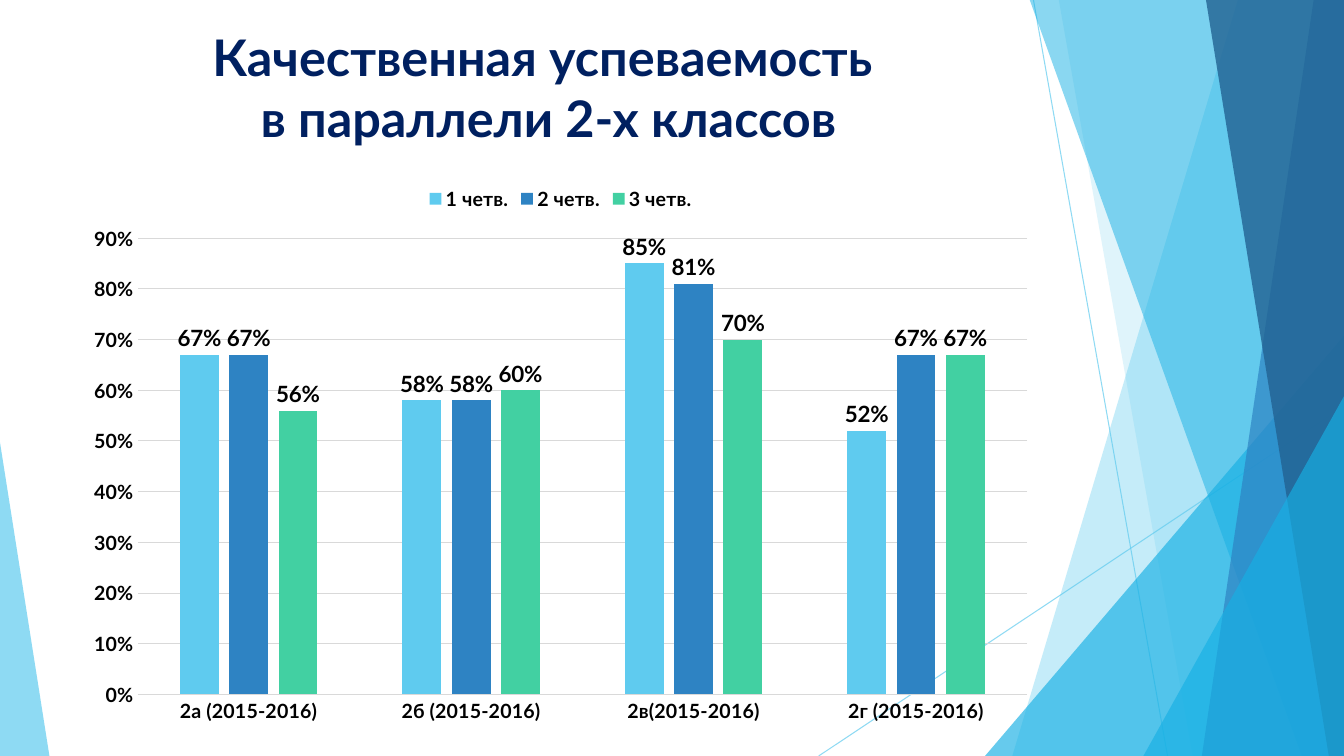
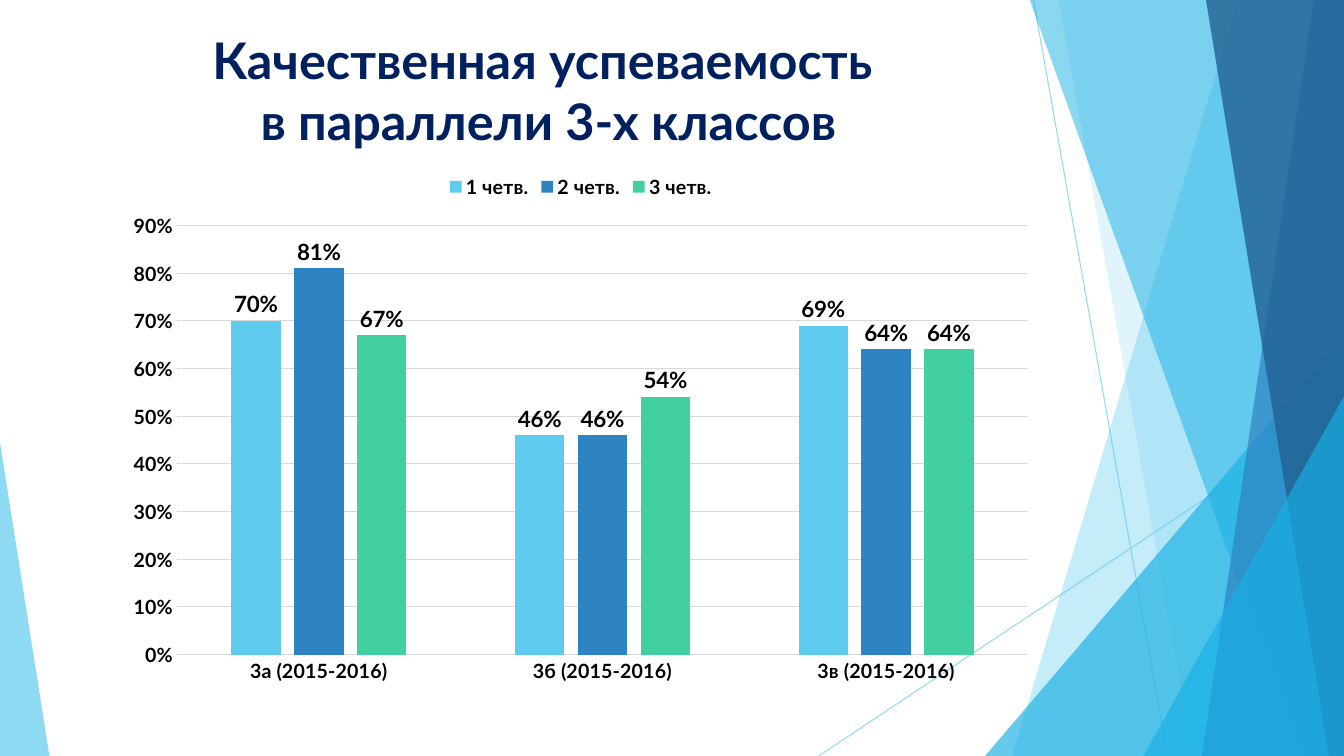
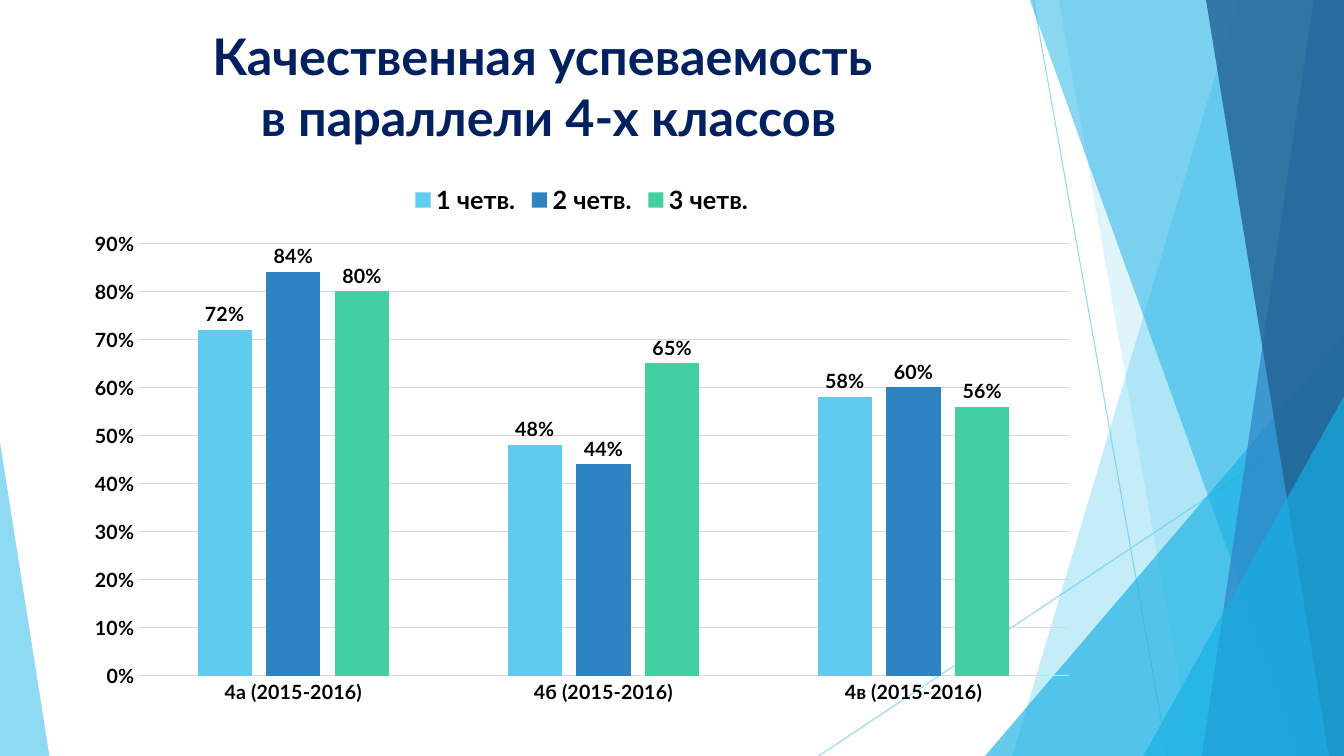
from lxml.etree import SubElement
from pptx import Presentation
from pptx.chart.data import CategoryChartData as ChartData
from pptx.dml.color import RGBColor
from pptx.enum.chart import XL_CHART_TYPE as KIND, XL_LABEL_POSITION as SPOT
from pptx.enum.chart import XL_LEGEND_POSITION as SIDE, XL_TICK_MARK as TICK
from pptx.enum.shapes import MSO_CONNECTOR as LINK, MSO_SHAPE as SHAPE
from pptx.enum.shapes import PP_PLACEHOLDER as HOLDER
from pptx.enum.text import MSO_ANCHOR as ANCHOR, MSO_AUTO_SIZE as FIT, PP_ALIGN as ALIGN
from pptx.oxml.ns import qn
from pptx.util import Pt

PX = 9144  # 100 px to the inch
WIDE, HIGH = 1333, 750
FACE = "Lato"
NAVY, BLACK, GREY = "002060", "000000", "D9D9D9"
SKY, CYAN, BLUE, DEEP, GREEN = "5FCBEF", "17B0E4", "2E83C3", "226292", "42D0A2"
TERMS = [("1 четв.", SKY), ("2 четв.", BLUE), ("3 четв.", GREEN)]


def paint(part, color, alpha=None):
    """Colour a fill, line or font; alpha is the opacity in percent."""
    if hasattr(part, "solid"):
        part.solid()
        tone = part.fore_color
    else:
        tone = part.color
    tone.rgb = RGBColor.from_string(color)
    if alpha:
        clr = next(part._xPr.iter(qn("a:srgbClr"))) if hasattr(part, "_xPr") else None
        if clr is None:
            clr = next(part._ln.iter(qn("a:srgbClr")))
        SubElement(clr, qn("a:alpha"), val=str(alpha * 1000))


def style(font, size, color=BLACK):
    font.name, font.size, font.bold = FACE, Pt(size), True
    paint(font, color)


deck = Presentation()
deck.slide_width, deck.slide_height = WIDE * PX, HIGH * PX
layout = deck.slide_layouts[5]
for holder in list(layout.placeholders):
    if holder.placeholder_format.type != HOLDER.TITLE:
        holder.element.getparent().remove(holder.element)

# Each slide: class year, title top and height, chart box, legend and label sizes, values
pages = [
    (2, 21, 190, (74, 174, 964, 554), 14, 16,
     {"2а (2015-2016)": (0.67, 0.67, 0.56), "2б (2015-2016)": (0.58, 0.58, 0.6),
      "2в(2015-2016)": (0.85, 0.81, 0.7), "2г (2015-2016)": (0.52, 0.67, 0.67)}),
    (3, 24, 187, (114, 162, 924, 526), 14, 16,
     {"3а (2015-2016)": (0.7, 0.81, 0.67), "3б (2015-2016)": (0.46, 0.46, 0.54),
      "3в (2015-2016)": (0.69, 0.64, 0.64)}),
    (4, 20, 191, (74, 171, 1006, 538), 18, 14,
     {"4а (2015-2016)": (0.72, 0.84, 0.8), "4б (2015-2016)": (0.48, 0.44, 0.65),
      "4в (2015-2016)": (0.58, 0.6, 0.56)}),
]

for year, top, tall, box, key, tag, marks in pages:
    slide = deck.slides.add_slide(layout)

    # Title
    title = slide.shapes.title
    title.left, title.top, title.width, title.height = (n * PX for n in (74, top, 940, tall))
    frame = title.text_frame
    frame.auto_size, frame.vertical_anchor, frame.word_wrap = FIT.NONE, ANCHOR.TOP, True
    para = frame.paragraphs[0]
    para.alignment = ALIGN.CENTER
    for i, line in enumerate(["Качественная успеваемость ", f"в параллели {year}-х классов"]):
        if i:
            para.add_line_break()
        run = para.add_run()
        run.text = line
        style(run.font, 36, NAVY)

    # Chart
    data = ChartData(number_format="0%")
    data.categories = list(marks)
    for (name, _), vals in zip(TERMS, zip(*marks.values())):
        data.add_series(name, vals)
    chart = slide.shapes.add_chart(KIND.COLUMN_CLUSTERED, *(n * PX for n in box), data).chart
    style(chart.font, 14)
    chart.has_title = False
    chart.has_legend = True
    chart.legend.position, chart.legend.include_in_layout = SIDE.TOP, False
    style(chart.legend.font, key)

    plot = chart.plots[0]
    plot.gap_width, plot.overlap, plot.vary_by_categories = 219, -27, False
    for bar, (_, color) in zip(plot.series, TERMS):
        paint(bar.format.fill, color)
        bar.invert_if_negative = False
        tags = bar.data_labels
        tags.show_value, tags.position = True, SPOT.OUTSIDE_END
        tags.number_format, tags.number_format_is_linked = "0%", False
        style(tags.font, tag)

    # Axes
    cat, val = chart.category_axis, chart.value_axis
    for axis in (cat, val):
        axis.major_tick_mark = axis.minor_tick_mark = TICK.NONE
        style(axis.tick_labels.font, 14)
    val.minimum_scale, val.maximum_scale, val.major_unit = 0, 0.9, 0.1
    val.tick_labels.number_format, val.tick_labels.number_format_is_linked = "0%", False
    val.format.line.fill.background()
    for rule in (cat.format.line, val.major_gridlines.format.line):
        paint(rule, GREY)
        rule.width = Pt(0.75)

# Backdrop, grouped and handed to the layout that all slides share
group = deck.slides[0].shapes.add_group_shape()
art = group.shapes
for ends in [(1025, 0, 1158, 750), (1333, 403, 812, 750)]:
    ray = art.add_connector(LINK.STRAIGHT, *(n * PX for n in ends))
    ray.line.width = Pt(0.75)
    paint(ray.line.fill, SKY, 70)
    SubElement(ray.element.spPr, qn("a:effectLst"))

# Bands give the left edge at top and bottom; triangles a box and the apex place
pieces = [
    (SKY, 36, (1228, 1004)),
    (SKY, 20, (1050, 1183)),
    (CYAN, 66, (977, 333, 356, 417, 1)),
    (CYAN, 50, (1021, 1291)),
    (BLUE, 70, (1303, 1192)),
    (DEEP, 80, (1196, 1318)),
    (CYAN, 66, (1134, 393, 199, 357, 1)),
    (SKY, 70, (0, 439, 49, 311, 0)),
]
for color, alpha, form in pieces:
    if len(form) == 2:
        head, foot = form
        path = art.build_freeform(head, -1, scale=PX)
        path.add_line_segments([(WIDE, -1), (WIDE, HIGH), (foot, HIGH)])
        piece = path.convert_to_shape()
    else:
        *area, apex = form
        piece = art.add_shape(SHAPE.ISOSCELES_TRIANGLE, *(n * PX for n in area))
        piece.adjustments[0] = apex
    piece.shadow.inherit = False
    paint(piece.fill, color, alpha)
    piece.line.fill.background()
layout.shapes.element.insert(2, group.element)

deck.save("out.pptx")
